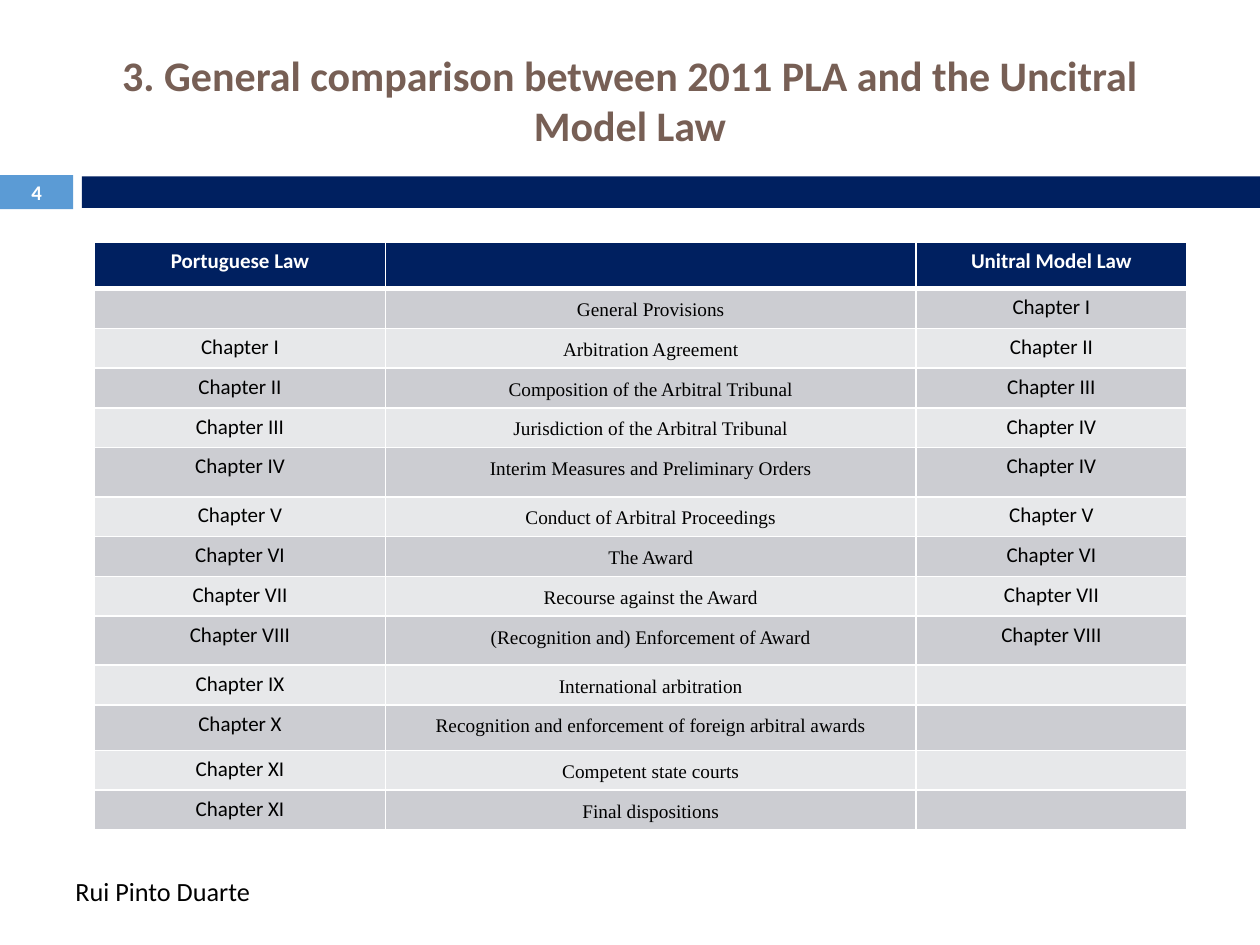
from lxml import etree
from pptx import Presentation
from pptx.dml.color import RGBColor
from pptx.enum.shapes import MSO_SHAPE
from pptx.enum.text import MSO_ANCHOR, PP_ALIGN
from pptx.oxml.ns import qn
from pptx.util import Inches, Pt

RECTANGLE = MSO_SHAPE.RECTANGLE
MIDDLE = MSO_ANCHOR.MIDDLE
CENTER = PP_ALIGN.CENTER
LEFT = PP_ALIGN.LEFT

WHITE = RGBColor(0xFF, 0xFF, 0xFF)
BLACK = RGBColor(0, 0, 0)
BROWN = RGBColor(0x77, 0x5F, 0x55)
NAVY = RGBColor(0x00, 0x20, 0x60)
BLUE = RGBColor(0x5B, 0x9B, 0xD5)
DARK_BAND = RGBColor(0xCC, 0xCD, 0xD2)
LIGHT_BAND = RGBColor(0xE7, 0xE8, 0xEA)

SANS = "Calibri"
SERIF = "Times New Roman"

ROWS = [
    ("Portuguese Law", "", "Unitral Model Law"),
    ("", "General Provisions", "Chapter I"),
    ("Chapter I", "Arbitration Agreement", "Chapter II"),
    ("Chapter II", "Composition of the Arbitral Tribunal", "Chapter III"),
    ("Chapter III", "Jurisdiction of the Arbitral Tribunal", "Chapter IV"),
    ("Chapter IV", "Interim Measures and Preliminary Orders", "Chapter IV"),
    ("Chapter V", "Conduct of Arbitral Proceedings", "Chapter V"),
    ("Chapter VI", "The Award", "Chapter VI"),
    ("Chapter VII", "Recourse against the Award", "Chapter VII"),
    ("Chapter VIII", "(Recognition and) Enforcement of Award", "Chapter VIII"),
    ("Chapter IX", "International arbitration", ""),
    ("Chapter X", "Recognition and enforcement of foreign arbitral awards", ""),
    ("Chapter XI", "Competent state courts", ""),
    ("Chapter XI", "Final dispositions", ""),
]
COLUMN_WIDTHS = [2.31, 4.21, 2.15]
TALL_ROWS = {0: 0.37, 5: 0.39, 9: 0.39, 11: 0.36}


def write(paragraph, text, size, color, font=SANS, bold=False, align=CENTER):
    paragraph.alignment = align
    run = paragraph.add_run()
    run.text = text
    run.font.name = font
    run.font.size = Pt(size)
    run.font.bold = bold
    run.font.color.rgb = color


def place(shape, box):
    shape.left, shape.top, shape.width, shape.height = map(Inches, box)


def add_title(slide, box):
    title = slide.shapes.title
    place(title, box)
    title.text_frame.vertical_anchor = MIDDLE
    write(title.text_frame.paragraphs[0],
          "3. General comparison between 2011 PLA and the Uncitral Model Law",
          24, BROWN, bold=True)


def add_bar(slide, box, color):
    bar = slide.shapes.add_shape(RECTANGLE, *map(Inches, box))
    bar.shadow.inherit = False
    bar.fill.solid()
    bar.fill.fore_color.rgb = color
    bar.line.fill.background()
    return bar


def add_band(slide, box):
    left, top, width, height = box
    number_width, gap = 0.58, 0.07
    bar_left = left + number_width + gap
    add_bar(slide, (bar_left, top + 0.01, width - bar_left, height - 0.02), NAVY)
    number = add_bar(slide, (left, top, number_width, height), BLUE)
    frame = number.text_frame
    frame.margin_top = frame.margin_bottom = 0
    frame.vertical_anchor = MIDDLE
    write(frame.paragraphs[0], "4", 11.9, WHITE, bold=True)


def add_borders(cell, bottom_width):
    properties = cell._tc.get_or_add_tcPr()
    widths = {"a:lnL": 1, "a:lnR": 1, "a:lnT": 1, "a:lnB": bottom_width}
    for position, (tag, width) in enumerate(widths.items()):
        line = etree.Element(qn(tag), w=str(Pt(width)))
        fill = etree.SubElement(line, qn("a:solidFill"))
        etree.SubElement(fill, qn("a:srgbClr"), val=str(WHITE))
        properties.insert(position, line)


def fill_cell(cell, text, row, column):
    header = row == 0
    cell.fill.solid()
    cell.fill.fore_color.rgb = NAVY if header else (LIGHT_BAND, DARK_BAND)[row % 2]
    add_borders(cell, 3 if header else 1)
    paragraph = cell.text_frame.paragraphs[0]
    if not text:
        etree.SubElement(paragraph._p, qn("a:endParaRPr"), sz="1200")
    elif header:
        write(paragraph, text, 12, WHITE, bold=True)
    elif column == 1:
        cell.margin_left = cell.margin_right = Inches(0.07)
        cell.margin_top = cell.margin_bottom = 0
        paragraph.line_spacing = 1.5
        write(paragraph, text, 11, BLACK, font=SERIF)
    else:
        write(paragraph, text, 12, BLACK)


def add_comparison_table(slide, box):
    table = slide.shapes.add_table(
        len(ROWS), len(COLUMN_WIDTHS), *map(Inches, box)).table
    for column, width in zip(table.columns, COLUMN_WIDTHS):
        column.width = Inches(width)
    regular = (box[3] - sum(TALL_ROWS.values())) / (len(ROWS) - len(TALL_ROWS))
    for row, texts in enumerate(ROWS):
        table.rows[row].height = Inches(TALL_ROWS.get(row, regular))
        for column, text in enumerate(texts):
            fill_cell(table.cell(row, column), text, row, column)


def add_author(slide, box):
    frame = slide.shapes.add_textbox(*map(Inches, box)).text_frame
    frame.word_wrap = True
    write(frame.paragraphs[0], "Rui Pinto Duarte", 15, BLACK, align=LEFT)


def main():
    presentation = Presentation()
    presentation.slide_width = Inches(10)
    presentation.slide_height = Inches(7.5)
    slide = presentation.slides.add_slide(presentation.slide_layouts[5])
    add_title(slide, (0.5, 0.25, 9, 1.08))
    add_band(slide, (0, 1.39, 10, 0.27))
    add_author(slide, (0.5, 6.9, 4.25, 0.35))
    add_comparison_table(slide, (0.75, 1.92, 8.67, 4.67))
    presentation.save("out.pptx")


if __name__ == "__main__":
    main()
